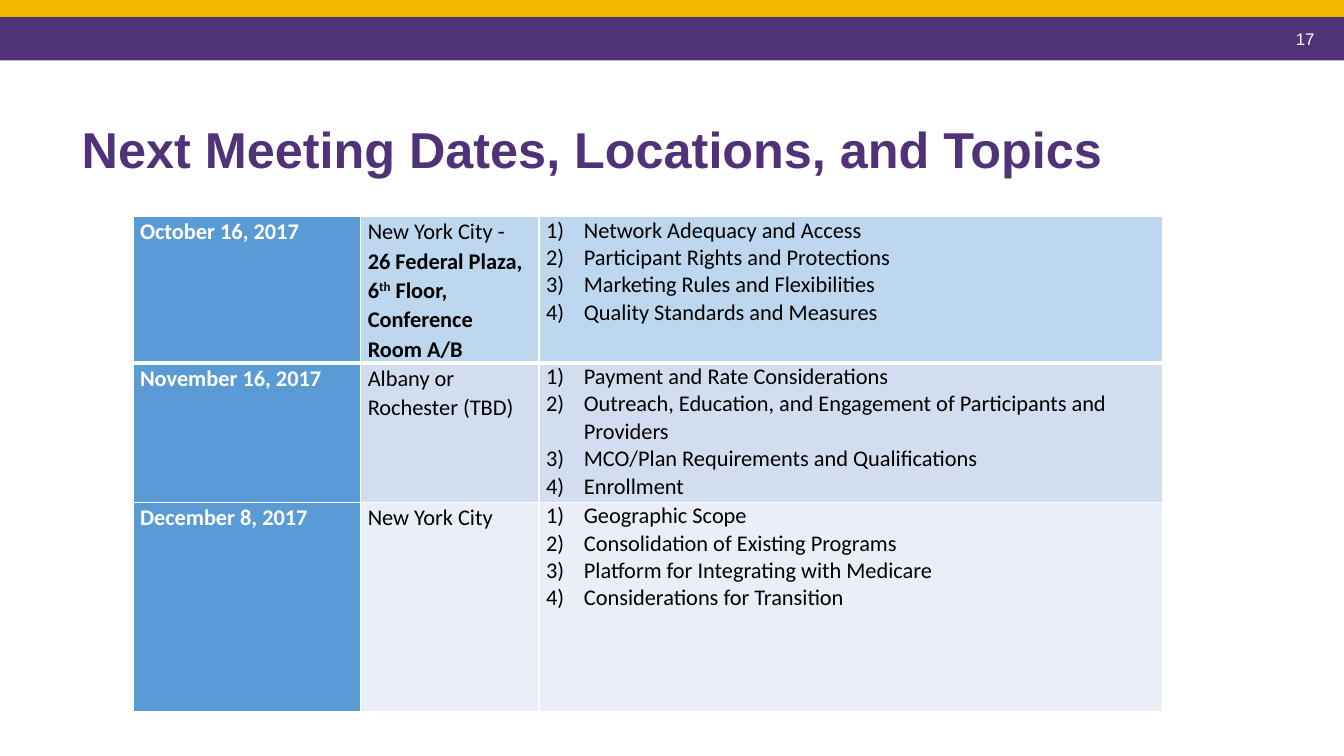
from dataclasses import dataclass

from lxml import etree
from pptx import Presentation
from pptx.dml.color import RGBColor
from pptx.enum.shapes import MSO_SHAPE
from pptx.enum.text import MSO_ANCHOR, MSO_AUTO_SIZE, PP_ALIGN
from pptx.oxml.ns import qn
from pptx.util import Pt

RECTANGLE = MSO_SHAPE.RECTANGLE
MIDDLE = MSO_ANCHOR.MIDDLE
NO_AUTOFIT = MSO_AUTO_SIZE.NONE
RIGHT = PP_ALIGN.RIGHT

COLOURS = {
    "purple": "503278",
    "gold": "F2B800",
    "white": "FFFFFF",
    "black": "000000",
    "date": "5B9BD5",
    "first": "BDD7EE",
    "second": "D2DEEF",
    "third": "EAEFF7",
}
TOPIC_INDENT = Pt(27)
CELL_INSET = Pt(5.04)
COLUMN_WIDTHS = (162.7, 127.4, 445.7)


@dataclass(frozen=True)
class Span:
    text: str
    bold: bool = False
    raised: bool = False


@dataclass(frozen=True)
class Meeting:
    date: str
    place: tuple[Span, ...]
    topics: tuple[str, ...]
    fill: str
    height: float
    top_border: float = 1
    bottom_border: float = 1


@dataclass(frozen=True)
class Band:
    top: float
    height: float
    fill: str


BANDS = (Band(12.2, 31, "purple"), Band(0, 12.2, "gold"))
MEETINGS = (
    Meeting(
        "October 16, 2017",
        (
            Span("New York City - "),
            Span("26 Federal Plaza, 6", bold=True),
            Span("th", bold=True, raised=True),
            Span(" Floor, Conference Room A/B", bold=True),
        ),
        (
            "Network Adequacy and Access",
            "Participant Rights and Protections",
            "Marketing Rules and Flexibilities",
            "Quality Standards and Measures",
        ),
        "first", 100.1, bottom_border=3,
    ),
    Meeting(
        "November 16, 2017",
        (Span("Albany or Rochester (TBD)"),),
        (
            "Payment and Rate Considerations",
            "Outreach, Education, and Engagement of Participants and Providers",
            "MCO/Plan Requirements and Qualifications",
            "Enrollment",
        ),
        "second", 99.4, top_border=3,
    ),
    Meeting(
        "December 8, 2017",
        (Span("New York City"),),
        (
            "Geographic Scope",
            "Consolidation of Existing Programs",
            "Platform for Integrating with Medicare",
            "Considerations for Transition",
        ),
        "third", 149.8,
    ),
)


def colour(name: str) -> RGBColor:
    return RGBColor.from_string(COLOURS[name])


def add_span(para, span: Span, size: float, font: str, ink: str) -> None:
    run = para.add_run()
    run.text = span.text
    run.font.size = Pt(size)
    run.font.name = font
    run.font.bold = span.bold
    run.font.color.rgb = colour(ink)
    if span.raised:
        run.font._element.set("baseline", "30000")


def number_topic(para) -> None:
    """Give the paragraph a hanging automatic number such as 1)."""
    properties = para._p.get_or_add_pPr()
    properties.set("marL", str(TOPIC_INDENT))
    properties.set("indent", str(-TOPIC_INDENT))
    etree.SubElement(properties, qn("a:buFont"), typeface="+mj-lt")
    etree.SubElement(properties, qn("a:buAutoNum"), type="arabicParenR")


def format_cell(cell, fill: str, meeting: Meeting) -> None:
    cell.margin_left = cell.margin_right = CELL_INSET
    cell.margin_top = cell.margin_bottom = 0
    borders = {"L": 1, "R": 1, "T": meeting.top_border, "B": meeting.bottom_border}
    properties = cell._tc.get_or_add_tcPr()
    for side, width in borders.items():
        line = etree.SubElement(properties, qn(f"a:ln{side}"), w=str(Pt(width)))
        paint = etree.SubElement(line, qn("a:solidFill"))
        etree.SubElement(paint, qn("a:srgbClr"), val=COLOURS["white"])
    cell.fill.solid()
    cell.fill.fore_color.rgb = colour(fill)


def fill_cell(cell, spans: tuple[Span, ...], ink: str) -> None:
    para = cell.text_frame.paragraphs[0]
    para.line_spacing = 1.07
    for span in spans:
        add_span(para, span, 16, "Calibri", ink)


def fill_topics(cell, topics: tuple[str, ...]) -> None:
    frame = cell.text_frame
    for index, topic in enumerate(topics):
        para = frame.add_paragraph() if index else frame.paragraphs[0]
        number_topic(para)
        add_span(para, Span(topic), 16, "Calibri", "black")


def add_band(page, band: Band) -> None:
    shape = page.shapes.add_shape(RECTANGLE, 0, Pt(band.top), Pt(960), Pt(band.height))
    shape.shadow.inherit = False
    shape.fill.solid()
    shape.fill.fore_color.rgb = colour(band.fill)
    shape.line.fill.background()


def set_title(page) -> None:
    title = page.shapes.title
    title.left, title.top, title.width, title.height = Pt(51.1), Pt(82.1), Pt(779.8), Pt(52.6)
    frame = title.text_frame
    frame.word_wrap = True
    frame.auto_size = NO_AUTOFIT
    frame.vertical_anchor = MIDDLE
    para = frame.paragraphs[0]
    para.alignment = PP_ALIGN.LEFT
    para.line_spacing = 0.9
    add_span(para, Span("Next Meeting Dates, Locations, and Topics", bold=True), 36, "Arial", "purple")


def add_schedule(page) -> None:
    frame = page.shapes.add_table(
        len(MEETINGS), len(COLUMN_WIDTHS), Pt(95), Pt(154.8),
        Pt(sum(COLUMN_WIDTHS)), Pt(sum(meeting.height for meeting in MEETINGS)),
    )
    table = frame.table
    table.first_row = table.horz_banding = False
    for column, width in zip(table.columns, COLUMN_WIDTHS):
        column.width = Pt(width)
    for row, meeting in zip(table.rows, MEETINGS):
        row.height = Pt(meeting.height)
        date, place, topics = row.cells
        for cell, fill in ((date, "date"), (place, meeting.fill), (topics, meeting.fill)):
            format_cell(cell, fill, meeting)
        fill_cell(date, (Span(meeting.date, bold=True),), "white")
        fill_cell(place, meeting.place, "black")
        fill_topics(topics, meeting.topics)


def add_page_number(page) -> None:
    box = page.shapes.add_textbox(Pt(730), Pt(13), Pt(216), Pt(28.8))
    frame = box.text_frame
    frame.word_wrap = True
    frame.vertical_anchor = MIDDLE
    para = frame.paragraphs[0]
    para.alignment = RIGHT
    add_span(para, Span("17"), 12, "Arial", "white")


def main() -> None:
    deck = Presentation()
    deck.slide_width, deck.slide_height = Pt(960), Pt(540)
    page = deck.slides.add_slide(deck.slide_layouts[5])
    for band in BANDS:
        add_band(page, band)
    set_title(page)
    add_schedule(page)
    add_page_number(page)
    deck.save("out.pptx")


if __name__ == "__main__":
    main()
